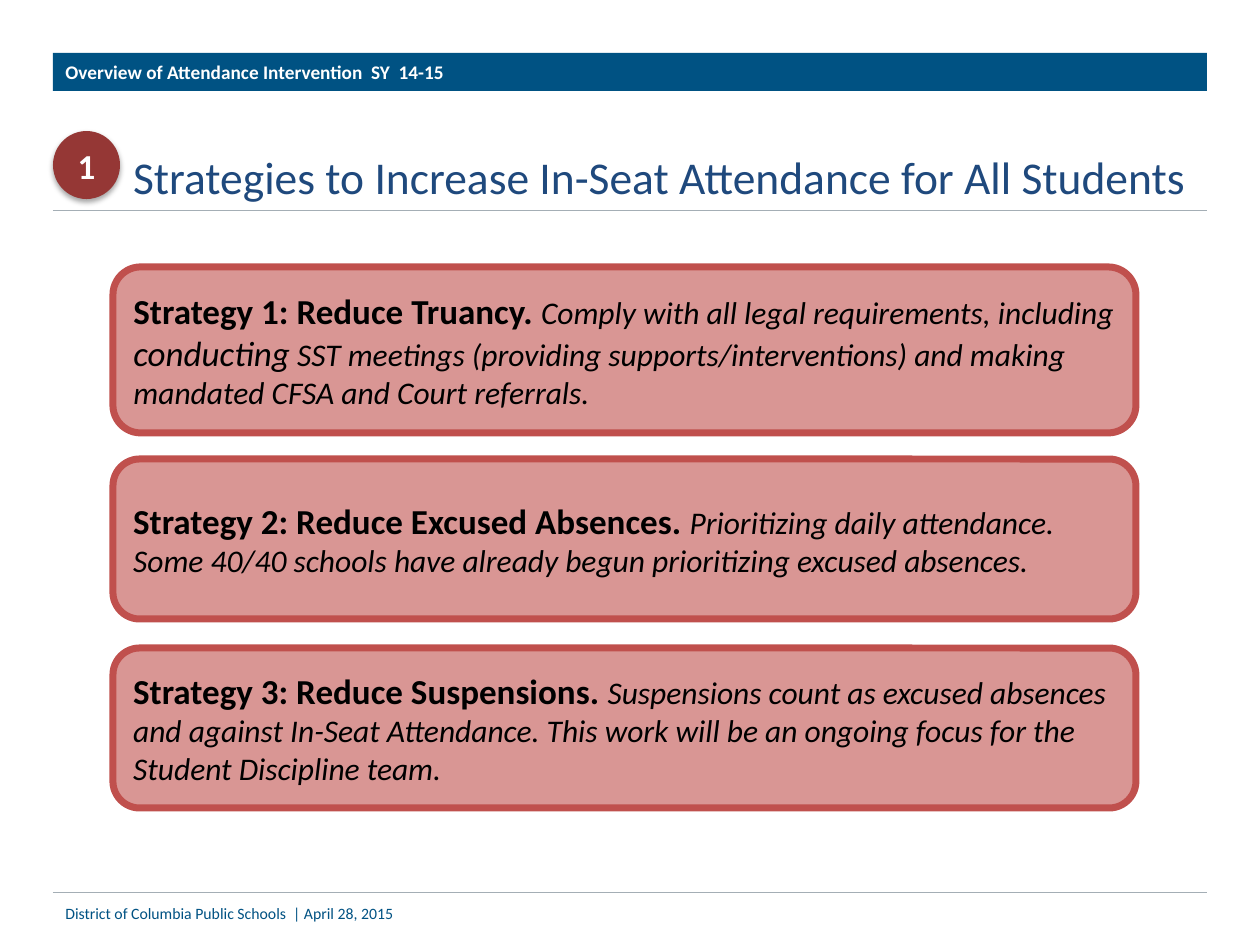
from dataclasses import dataclass

from lxml import etree
from pptx import Presentation
from pptx.dml.color import RGBColor
from pptx.enum.shapes import MSO_CONNECTOR, MSO_SHAPE
from pptx.enum.text import MSO_ANCHOR, PP_ALIGN
from pptx.oxml import parse_xml
from pptx.oxml.ns import nsdecls, qn
from pptx.util import Pt

LEFT, CENTER = PP_ALIGN.LEFT, PP_ALIGN.CENTER
MIDDLE, BOTTOM = MSO_ANCHOR.MIDDLE, MSO_ANCHOR.BOTTOM
RECTANGLE, ROUNDED, OVAL = (
    MSO_SHAPE.RECTANGLE, MSO_SHAPE.ROUNDED_RECTANGLE, MSO_SHAPE.OVAL)


@dataclass(frozen=True)
class Theme:
    font: str = "Calibri"
    white: str = "FFFFFF"
    black: str = "000000"
    navy: str = "005283"
    title: str = "1F497D"
    rule: str = "A4AEB5"
    badge: str = "953735"
    card: str = "D99694"
    card_line: str = "C0504D"
    title_size: int = 26
    lead_size: int = 20
    body_size: int = 18
    header_size: int = 11
    footer_size: int = 9


THEME = Theme()

# Content
HEADER = "Overview of Attendance Intervention  SY  14-15"
TITLE = "Strategies to Increase In-Seat Attendance for All Students"
BADGE = "1"
FOOTER = "District of Columbia Public Schools  | April 28, 2015"
# Each strategy: top, height, lead, then (text, size) details
STRATEGIES = [
    (267, 166, "Strategy 1: Reduce Truancy. ", [
        ("Comply with all legal requirements, including ", THEME.body_size),
        ("conducting", THEME.lead_size),
        (" SST meetings (providing supports/interventions) and making "
         "mandated CFSA and Court referrals.", THEME.body_size)]),
    (459, 160, "Strategy 2: Reduce Excused Absences. ", [
        ("Prioritizing daily attendance. Some 40/40 schools have already "
         "begun prioritizing excused absences.", THEME.body_size)]),
    (648, 160, "Strategy 3: Reduce Suspensions. ", [
        ("Suspensions count as excused absences and against In-Seat "
         "Attendance. This work will be an ongoing focus for the Student "
         "Discipline team.", THEME.body_size)]),
]

# Layout in px, 126 to the inch
SLIDE_WIDTH, SLIDE_HEIGHT = 1260, 945
MARGIN = 53
CONTENT_WIDTH = SLIDE_WIDTH - 2 * MARGIN
RULES = (210, 892)
CARD_LEFT, CARD_WIDTH = 113, 1023
TITLE_INSET = 72


def px(value):
    return round(value * 914400 / 126)


def color(value):
    return RGBColor.from_string(value)


def write(shape, runs, align=LEFT, anchor=MIDDLE):
    """Fill a shape with one paragraph of (text, size, colour, bold, italic)."""
    frame = shape.text_frame
    frame.word_wrap = True
    frame.vertical_anchor = anchor
    paragraph = frame.paragraphs[0]
    paragraph.alignment = align
    for text, size, ink, bold, italic in runs:
        run = paragraph.add_run()
        run.text = text
        font = run.font
        font.name, font.size = THEME.font, Pt(size)
        font.bold, font.italic = bold, italic
        font.color.rgb = color(ink)


def add_box(slide, kind, bounds, fill, line=None):
    shape = slide.shapes.add_shape(kind, *map(px, bounds))
    shape.shadow.inherit = False
    shape.fill.solid()
    shape.fill.fore_color.rgb = color(fill)
    if line:
        shape.line.color.rgb = color(line)
        shape.line.width = Pt(4)
    else:
        shape.line.fill.background()
    return shape


def add_text(slide, bounds):
    return slide.shapes.add_textbox(*map(px, bounds))


def add_rule(slide, y):
    rule = slide.shapes.add_connector(
        MSO_CONNECTOR.STRAIGHT,
        px(MARGIN), px(y), px(MARGIN + CONTENT_WIDTH), px(y))
    rule.line.color.rgb = color(THEME.rule)
    rule.line.width = Pt(0.5)
    etree.SubElement(rule._element.spPr, qn("a:effectLst"))


def add_drop_shadow(shape):
    effects = shape._element.spPr.find(qn("a:effectLst"))
    effects.append(parse_xml(
        f'<a:outerShdw {nsdecls("a")} blurRad="{Pt(3.1)}" dist="{Pt(1.8)}" '
        f'dir="5400000" rotWithShape="0"><a:srgbClr val="{THEME.black}">'
        '<a:alpha val="35000"/></a:srgbClr></a:outerShdw>'))


def main():
    presentation = Presentation()
    presentation.slide_width = px(SLIDE_WIDTH)
    presentation.slide_height = px(SLIDE_HEIGHT)
    slide = presentation.slides.add_slide(presentation.slide_layouts[6])

    # Rules under the title and above the footer
    for y in RULES:
        add_rule(slide, y)

    # Title, inset to clear the badge
    title = add_text(slide, (MARGIN, 91, CONTENT_WIDTH, 119))
    title.text_frame.margin_left = px(TITLE_INSET)
    write(title, [(TITLE, THEME.title_size, THEME.title, False, False)],
          CENTER, BOTTOM)

    # Header band and footer
    header = add_box(slide, RECTANGLE, (MARGIN, 53, CONTENT_WIDTH, 38),
                     THEME.navy)
    write(header, [(HEADER, THEME.header_size, THEME.white, True, False)])
    footer = add_text(slide, (MARGIN, RULES[1], 829, 42))
    write(footer, [(FOOTER, THEME.footer_size, THEME.navy, False, False)])

    # Numbered badge
    badge = add_box(slide, OVAL, (MARGIN, 131, 67, 68), THEME.badge)
    add_drop_shadow(badge)
    write(badge, [(BADGE, THEME.lead_size, THEME.white, True, False)], CENTER)

    # Strategy cards
    for top, height, lead, details in STRATEGIES:
        card = add_box(slide, ROUNDED, (CARD_LEFT, top, CARD_WIDTH, height),
                       THEME.card, THEME.card_line)
        runs = [(lead, THEME.lead_size, THEME.black, True, False)]
        runs += [(text, size, THEME.black, False, True)
                 for text, size in details]
        write(card, runs)

    presentation.save("out.pptx")


if __name__ == "__main__":
    main()
